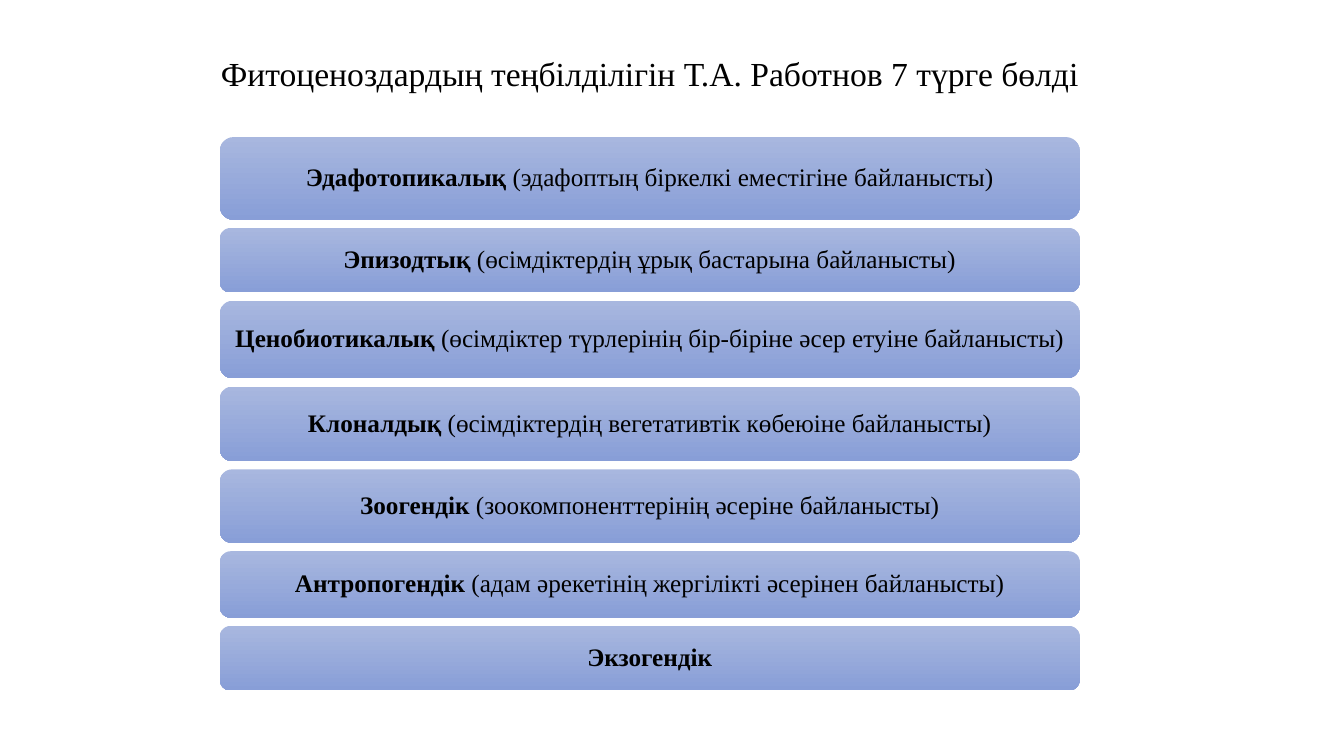
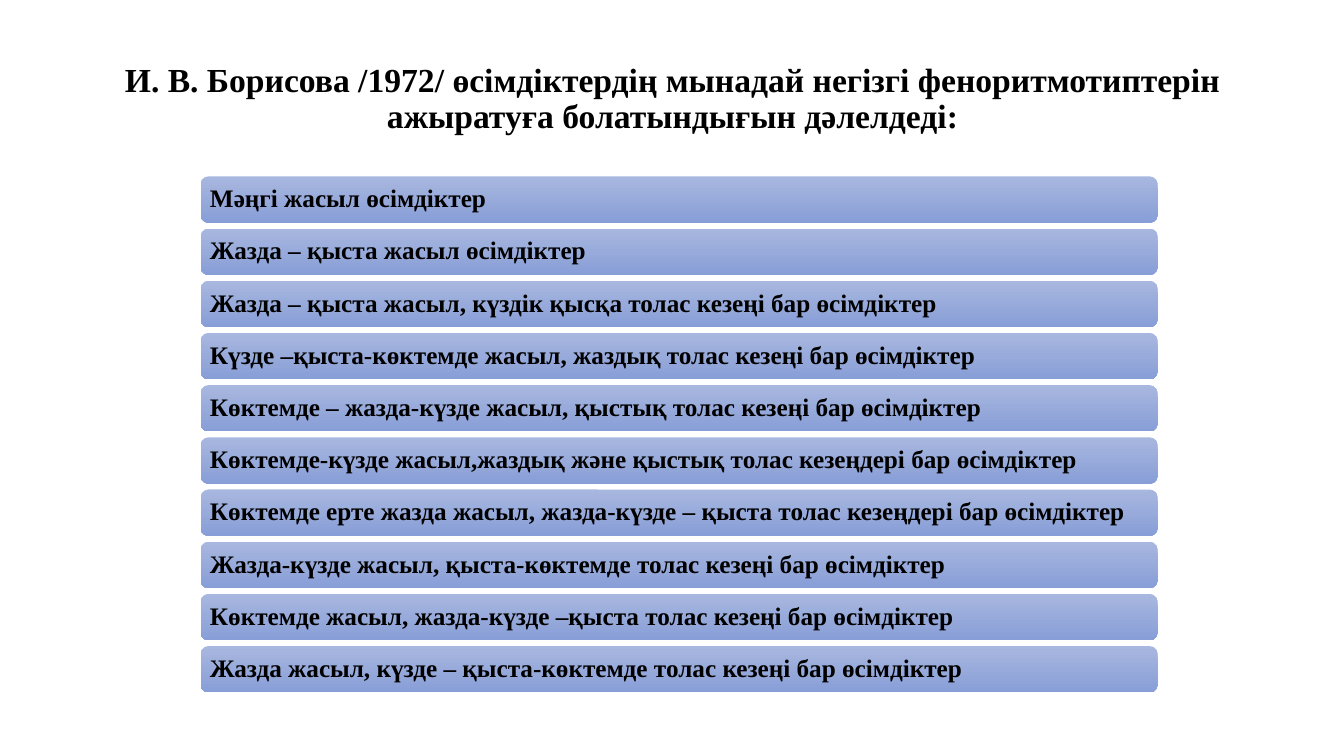
from pptx import Presentation
from pptx.dml.color import RGBColor
from pptx.enum import shapes, text
from pptx.util import Inches, Pt

BLACK = RGBColor(0x00, 0x00, 0x00)
BAR_TOP = RGBColor(0xA8, 0xB7, 0xDF)
BAR_BOTTOM = RGBColor(0x88, 0x9E, 0xD7)
FONT = "Times New Roman"
TITLE_SIZE, BAR_SIZE = 24, 18
INSET = 0.07
CENTER, LEFT = text.PP_ALIGN.CENTER, text.PP_ALIGN.LEFT

SLIDES = [
    {
        "title": "Фитоценоздардың теңбілділігін Т.А. Работнов 7 түрге бөлді",
        "title_box": (1.46, 0.44, 9.97, 0.62),
        "title_bold": False,
        "area": (2.18, 1.36, 8.53, 5.49),
        "heights": [0.82, 0.64, 0.77, 0.74, 0.73, 0.66, 0.64],
        "align": CENTER,
        "bars": [
            ("Эдафотопикалық", " (эдафоптың біркелкі еместігіне байланысты)"),
            ("Эпизодтық", " (өсімдіктердің ұрық бастарына байланысты)"),
            ("Ценобиотикалық", " (өсімдіктер түрлерінің бір-біріне әсер етуіне байланысты)"),
            ("Клоналдық", " (өсімдіктердің вегетативтік көбеюіне байланысты)"),
            ("Зоогендік", " (зоокомпоненттерінің әсеріне байланысты)"),
            ("Антропогендік", " (адам әрекетінің жергілікті әсерінен байланысты)"),
            ("Экзогендік",),
        ],
    },
    {
        "title": "И. В. Борисова /1972/ өсімдіктердің мынадай негізгі "
                 "феноритмотиптерін ажыратуға болатындығын дәлелдеді:",
        "title_box": (0.92, 0.26, 11.5, 1.45),
        "title_bold": True,
        "area": (1.99, 1.75, 9.49, 5.12),
        "heights": [0.46] * 10,
        "align": LEFT,
        "bars": [
            ("Мәңгі жасыл өсімдіктер",),
            ("Жазда – қыста жасыл өсімдіктер",),
            ("Жазда – қыста жасыл, күздік қысқа толас кезеңі бар өсімдіктер",),
            ("Күзде –қыста-көктемде жасыл, жаздық толас кезеңі бар өсімдіктер",),
            ("Көктемде – жазда-күзде жасыл, қыстық толас кезеңі бар өсімдіктер",),
            ("Көктемде-күзде жасыл,жаздық және қыстық толас кезеңдері бар өсімдіктер",),
            ("Көктемде ерте жазда жасыл, жазда-күзде – қыста толас кезеңдері бар өсімдіктер",),
            ("Жазда-күзде жасыл, қыста-көктемде толас кезеңі бар өсімдіктер",),
            ("Көктемде жасыл, жазда-күзде –қыста толас кезеңі бар өсімдіктер",),
            ("Жазда жасыл, күзде – қыста-көктемде толас кезеңі бар өсімдіктер",),
        ],
    },
]


def write(tf, runs, size, align):
    tf.word_wrap = True
    tf.vertical_anchor = text.MSO_ANCHOR.MIDDLE
    p = tf.paragraphs[0]
    p.alignment = align
    p.line_spacing = 0.9
    for words, bold in runs:
        r = p.add_run()
        r.text = words
        for name, value in {"name": FONT, "size": Pt(size), "bold": bold}.items():
            setattr(r.font, name, value)
        r.font.color.rgb = BLACK


def add_title(s, data):
    box = s.shapes.add_textbox(*map(Inches, data["title_box"]))
    write(box.text_frame, [(data["title"], data["title_bold"])], TITLE_SIZE, CENTER)


def add_bar(s, box, parts, align):
    sp = s.shapes.add_shape(shapes.MSO_SHAPE.ROUNDED_RECTANGLE, *map(Inches, box))
    sp.shadow.inherit = False
    sp.line.fill.background()
    sp.fill.gradient()
    sp.fill.gradient_angle = 270
    for stop, color in zip(sp.fill.gradient_stops, (BAR_TOP, BAR_BOTTOM)):
        stop.color.rgb = color
    tf = sp.text_frame
    for side in ("left", "top", "right", "bottom"):
        setattr(tf, f"margin_{side}", Inches(INSET))
    write(tf, [(part, i == 0) for i, part in enumerate(parts)], BAR_SIZE, align)


def add_bars(s, data):
    left, top, width, height = data["area"]
    heights = data["heights"]
    gap = (height - sum(heights)) / (len(heights) - 1)
    for parts, h in zip(data["bars"], heights):
        add_bar(s, (left, top, width, h), parts, data["align"])
        top += h + gap


def main():
    prs = Presentation()
    prs.slide_width, prs.slide_height = Inches(13.33), Inches(7.5)
    for data in SLIDES:
        s = prs.slides.add_slide(prs.slide_layouts[6])
        add_title(s, data)
        add_bars(s, data)
    prs.save("out.pptx")


if __name__ == "__main__":
    main()
